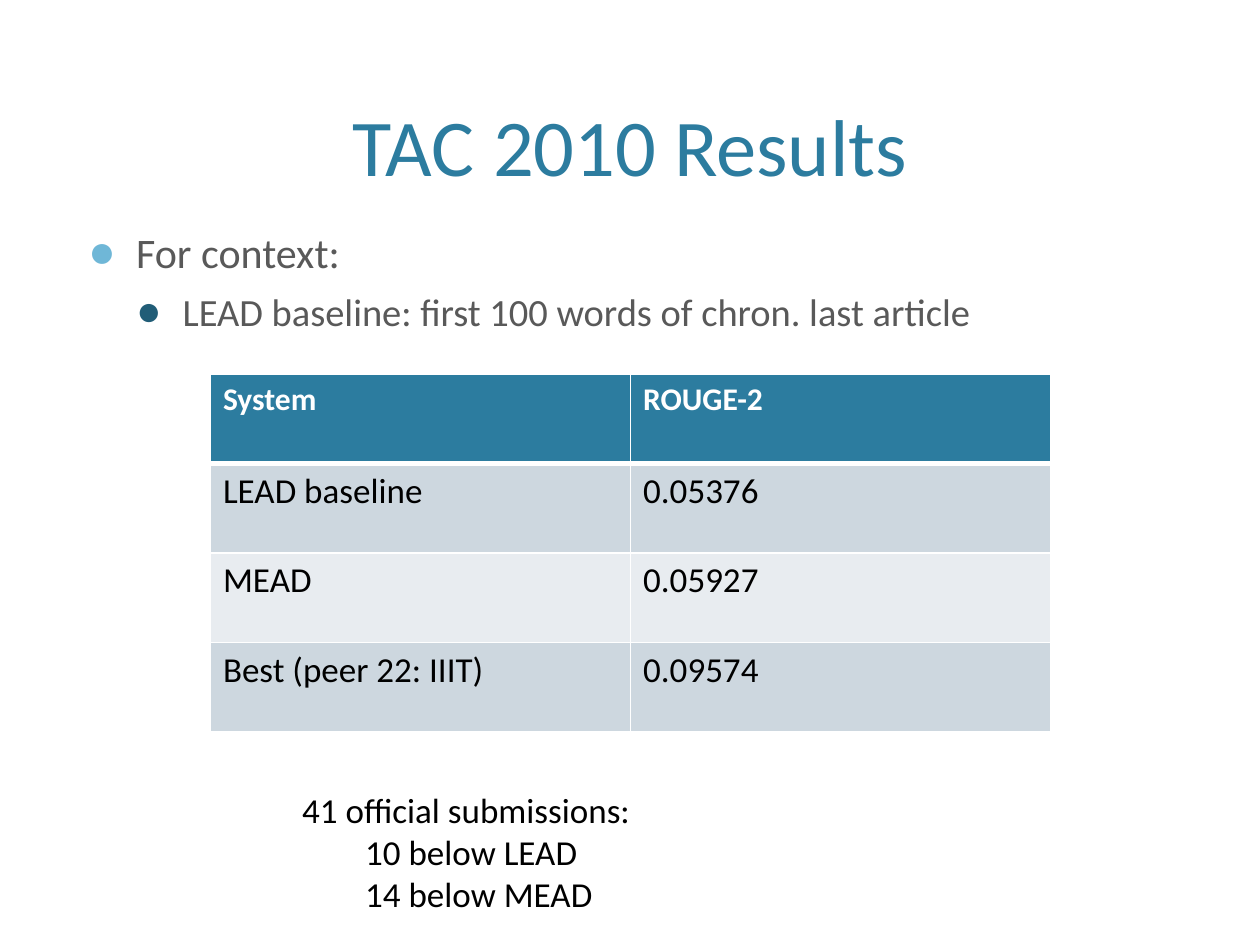
"""Build the TAC 2010 results slide with its ROUGE-2 table."""
import pptx
import pptx.dml.color
import pptx.enum.text
import pptx.oxml
import pptx.oxml.ns
import pptx.util
from pptx.util import Inches

COLORS = {
    "teal": "2C7C9F",
    "sky": "6FB7D7",
    "deep": "215D77",
    "gray": "595959",
    "black": "000000",
    "white": "FFFFFF",
    "band": "CDD7DF",
    "pale": "E8ECF0",
}
NS = pptx.oxml.ns.nsdecls("a")


def style(paragraph, size, color, bold=False):
    for run in paragraph.runs:
        run.font.name = "Calibri"
        run.font.size = pptx.util.Pt(size)
        run.font.bold = bold
        run.font.color.rgb = pptx.dml.color.RGBColor.from_string(COLORS[color])


def indent(paragraph, left, first=0):
    properties = paragraph._p.get_or_add_pPr()
    properties.set("marL", str(Inches(left)))
    properties.set("indent", str(Inches(first)))
    return properties


deck = pptx.Presentation()
deck.slide_width, deck.slide_height = Inches(10), Inches(7.5)
slide = deck.slides.add_slide(deck.slide_layouts[1])

title = slide.shapes.title
title.left, title.top = Inches(0.6), Inches(0.12)
title.width, title.height = Inches(8.8), Inches(1.46)
title.text_frame.text = "TAC 2010 Results"
title.text_frame.auto_size = pptx.enum.text.MSO_AUTO_SIZE.NONE
title.text_frame.vertical_anchor = pptx.enum.text.MSO_ANCHOR.BOTTOM
title.text_frame.paragraphs[0].alignment = pptx.enum.text.PP_ALIGN.CENTER
style(title.text_frame.paragraphs[0], 46, "teal")

context = slide.placeholders[1]
context.left, context.top = Inches(0.6), Inches(1.75)
context.width, context.height = Inches(8.8), Inches(4.75)
context.text_frame.text = "For context:\nLEAD baseline: first 100 words of chron. last article"
context.text_frame.auto_size = pptx.enum.text.MSO_AUTO_SIZE.NONE
levels = [(24, 20, 0.38, -0.38, "sky"), (22, 6, 0.75, -0.37, "deep")]
for level, (point, (size, before, left, first, bullet)) in enumerate(
    zip(context.text_frame.paragraphs, levels)
):
    point.level = level
    point.space_before = pptx.util.Pt(before)
    style(point, size, "gray")
    properties = indent(point, left, first)
    for xml in (
        f'<a:buClr {NS}><a:srgbClr val="{COLORS[bullet]}"/></a:buClr>',
        f'<a:buSzPct {NS} val="110000"/>',
        f'<a:buChar {NS} char="●"/>',
    ):
        properties.append(pptx.oxml.parse_xml(xml))

scores = [
    ("System", "ROUGE-2"),
    ("LEAD baseline", "0.05376"),
    ("MEAD", "0.05927"),
    ("Best (peer 22: IIIT)", "0.09574"),
]
results = slide.shapes.add_table(
    len(scores), 2, Inches(1.67), Inches(2.97), Inches(6.67), Inches(2.84)
).table
for row, entries in enumerate(scores):
    header = row == 0
    fill = "teal" if header else ("pale", "band")[row % 2]
    for column, entry in enumerate(entries):
        cell = results.cell(row, column)
        cell.text_frame.text = entry
        style(cell.text_frame.paragraphs[0], 18 if header else 20,
              "white" if header else "black", header)
        cell.fill.solid()
        cell.fill.fore_color.rgb = pptx.dml.color.RGBColor.from_string(COLORS[fill])
        borders = cell._tc.get_or_add_tcPr()
        for position, side in enumerate("LRTB"):
            heavy = (row, side) in ((0, "B"), (1, "T"))
            width = pptx.util.Pt(3 if heavy else 1)
            borders.insert(position, pptx.oxml.parse_xml(
                f'<a:ln{side} {NS} w="{width}"><a:solidFill>'
                f'<a:srgbClr val="{COLORS["white"]}"/></a:solidFill></a:ln{side}>'
            ))

submissions = slide.shapes.add_textbox(
    Inches(2.3), Inches(6.21), Inches(5.05), Inches(1.11)
).text_frame
submissions.word_wrap = True
submissions.auto_size = pptx.enum.text.MSO_AUTO_SIZE.SHAPE_TO_FIT_TEXT
submissions.text = "41 official submissions:\n10 below LEAD\n14 below MEAD"
for line, left in zip(submissions.paragraphs, (0, 0.5, 0.5)):
    style(line, 20, "black")
    indent(line, left)

deck.save("out.pptx")
